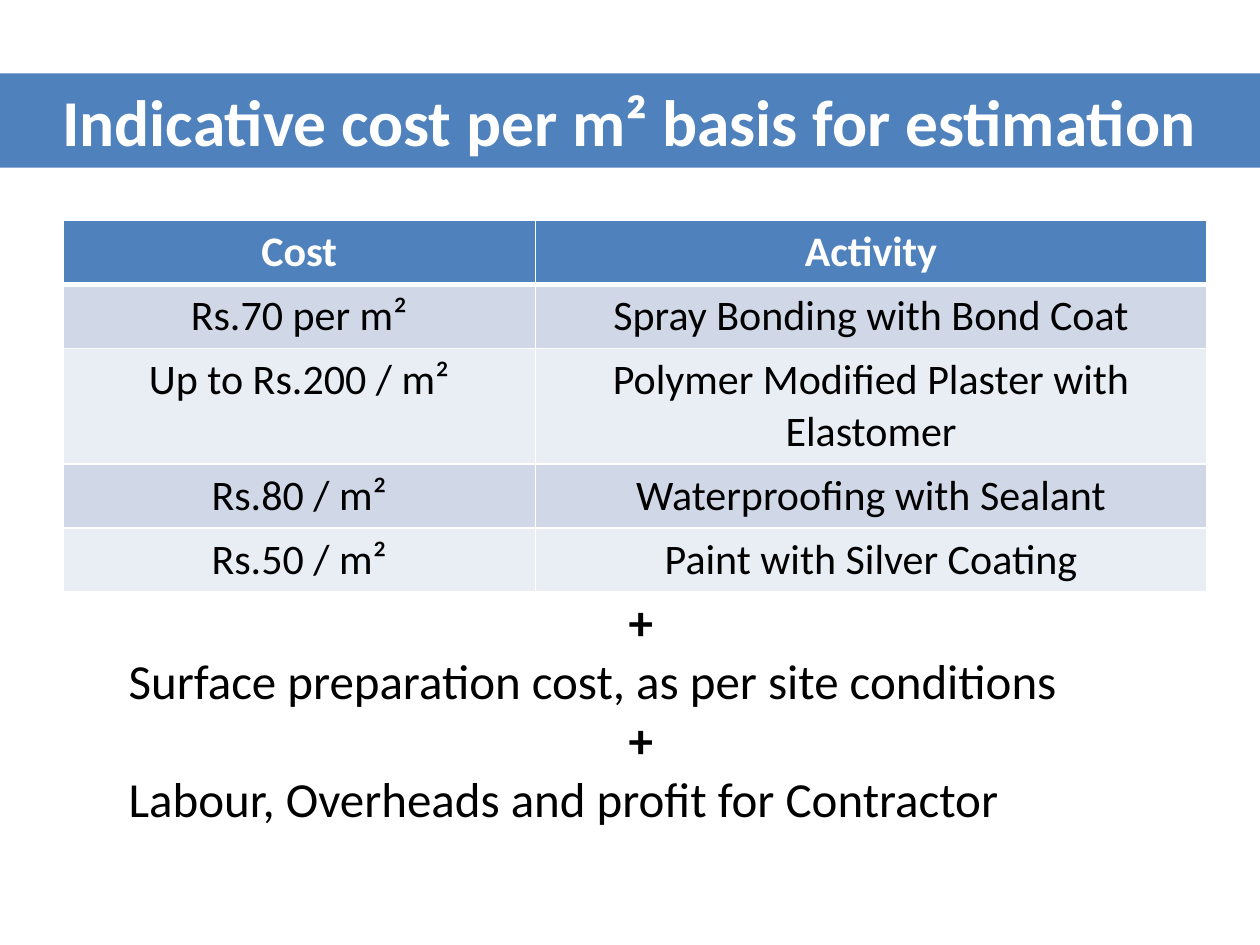
from lxml import etree
from pptx import Presentation
from pptx.dml.color import RGBColor
from pptx.enum import text
from pptx.oxml import ns
from pptx.util import Cm, Pt

BLUE = RGBColor(0x4F, 0x81, 0xBD)
BAND_DARK = RGBColor(0xD0, 0xD8, 0xE8)
BAND_LIGHT = RGBColor(0xE9, 0xED, 0xF4)
WHITE = RGBColor(0xFF, 0xFF, 0xFF)
BLACK = RGBColor(0, 0, 0)
CENTER, LEFT = text.PP_ALIGN.CENTER, text.PP_ALIGN.LEFT

COSTS = [
    ("Cost", "Activity"),
    ("Rs.70 per m²", "Spray Bonding with Bond Coat"),
    ("Up to Rs.200 / m²", "Polymer Modified Plaster with Elastomer"),
    ("Rs.80 / m²", "Waterproofing with Sealant"),
    ("Rs.50 / m²", "Paint with Silver Coating"),
]
EXTRAS = [
    "+",
    "Surface preparation cost, as per site conditions",
    "+",
    "Labour, Overheads and profit for Contractor",
]


def format_font(font, color, **values):
    for name, value in {"name": "Calibri", **values}.items():
        setattr(font, name, value)
    font.color.rgb = color


def place(shape, box):
    for name, value in zip(("left", "top", "width", "height"), box):
        setattr(shape, name, Cm(value))


def set_frame(frame):
    values = {
        "word_wrap": True,
        "auto_size": text.MSO_AUTO_SIZE.NONE,
        "vertical_anchor": text.MSO_ANCHOR.MIDDLE,
    }
    for name, value in values.items():
        setattr(frame, name, value)


def add_border(cell, side, points):
    line = etree.SubElement(cell._tc.get_or_add_tcPr(), ns.qn(f"a:ln{side}"), w=str(Pt(points)))
    fill = etree.SubElement(line, ns.qn("a:solidFill"))
    etree.SubElement(fill, ns.qn("a:srgbClr"), val=str(WHITE))


def title_band(slide, box):
    title = slide.shapes.title
    place(title, box)
    title.fill.solid()
    title.fill.fore_color.rgb = BLUE
    set_frame(title.text_frame)
    title.text_frame.text = "Indicative cost per m² basis for estimation"
    heading = title.text_frame.paragraphs[0]
    heading.alignment = CENTER
    format_font(heading.font, WHITE, size=Pt(37.4), bold=True)


def cost_table(slide, box):
    left, top, width, height = map(Cm, box)
    costs = slide.shapes.add_table(len(COSTS), 2, left, top, width, height).table
    costs.columns[0].width = Cm(9.52)
    costs.columns[1].width = width - Cm(9.52)
    for r, entries in enumerate(COSTS):
        # The plaster activity takes two lines
        costs.rows[r].height = Cm(2.32 if r == 2 else 1.29)
        header = r == 0
        band = BLUE if header else BAND_DARK if r % 2 else BAND_LIGHT
        borders = {"L": 1, "R": 1, "T": 3 if r == 1 else 1, "B": 3 if header else 1}
        for c, entry in enumerate(entries):
            cell = costs.cell(r, c)
            for side, points in borders.items():
                add_border(cell, side, points)
            cell.fill.solid()
            cell.fill.fore_color.rgb = band
            cell.text = entry
            label = cell.text_frame.paragraphs[0]
            label.alignment = CENTER
            format_font(label.font, WHITE if header else BLACK, size=Pt(24), bold=header)


def extra_costs(slide, box):
    extras = slide.placeholders[1]
    place(extras, box)
    frame = extras.text_frame
    set_frame(frame)
    frame.text = "\n".join(EXTRAS)
    for line in frame.paragraphs:
        plus = line.text == "+"
        properties = line._p.get_or_add_pPr()
        properties.set("marL", "0")
        properties.set("indent", "0")
        etree.SubElement(properties, ns.qn("a:buNone"))
        line.space_before = Pt(0)
        line.alignment = CENTER if plus else LEFT
        format_font(line.font, BLACK, size=Pt(28), bold=plus)


def main():
    deck = Presentation()
    deck.slide_width, deck.slide_height = Cm(25.4), Cm(19.05)
    slide = deck.slides.add_slide(deck.slide_layouts[1])
    title_band(slide, (0, 1.48, 25.4, 1.9))
    cost_table(slide, (1.27, 4.45, 23.06, 7.48))
    extra_costs(slide, (2.34, 12.5, 21.16, 3.6))
    deck.save("out.pptx")


if __name__ == "__main__":
    main()
